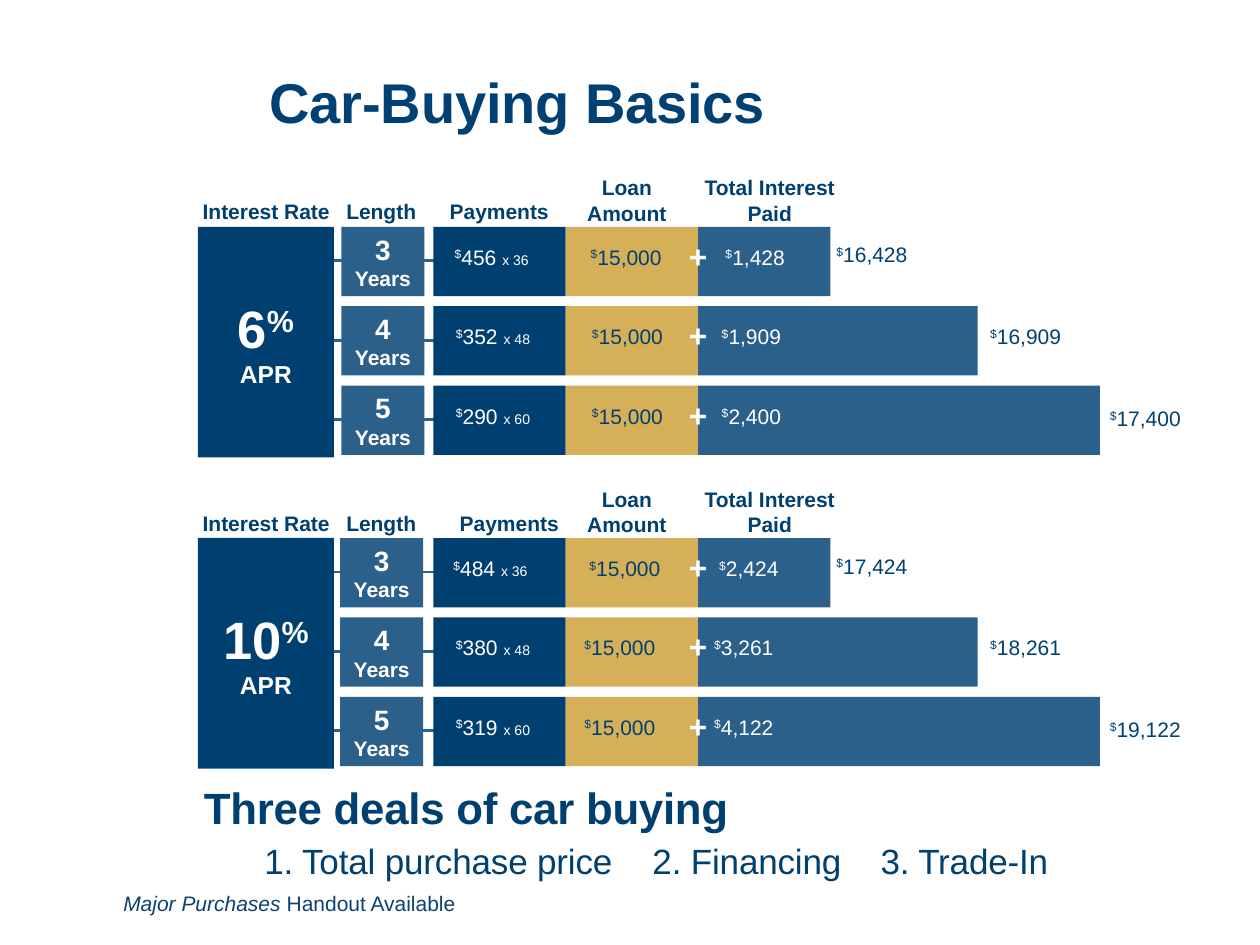
"""Build the car-buying slide comparing loan costs at two interest rates."""
from lxml.etree import SubElement
from pptx import Presentation
from pptx.dml.color import RGBColor
from pptx.enum.shapes import MSO_CONNECTOR, MSO_SHAPE
from pptx.enum.text import MSO_ANCHOR, PP_ALIGN
from pptx.oxml.ns import qn
from pptx.util import Inches, Pt

NAVY, BLUE, GOLD, WHITE = "004071", "2B608B", "D6B059", "FFFFFF"
RAISED = {"baseline": "30000"}
TIGHT = {"spc": "-10"}

presentation = Presentation()
presentation.slide_width, presentation.slide_height = Inches(10), Inches(7.5)
slide = presentation.slides.add_slide(presentation.slide_layouts[6])


def box(left, top, width, height, fill=None):
    area = [Inches(value) for value in (left, top, width, height)]
    if fill:
        shape = slide.shapes.add_shape(MSO_SHAPE.RECTANGLE, *area)
        shape.shadow.inherit = False
        shape.fill.solid()
        shape.fill.fore_color.rgb = RGBColor.from_string(fill)
        shape.line.fill.background()
    else:
        shape = slide.shapes.add_textbox(*area)
    shape.text_frame.word_wrap = True
    return shape.text_frame


def write(paragraph, parts, size, color, bold=False, align=PP_ALIGN.LEFT, tabs=()):
    paragraph.alignment = align
    if tabs:
        stops = SubElement(paragraph._p.get_or_add_pPr(), qn("a:tabLst"))
        for stop in tabs:
            SubElement(stops, qn("a:tab"), pos=str(Inches(stop)), algn="l")
    font = paragraph.font
    font.name, font.size, font.bold = "Arial", Pt(size), bold
    if color:
        font.color.rgb = RGBColor.from_string(color)
    for text, style in parts:
        run = paragraph.add_run()
        run.text = text
        for key, value in style.items():
            if key == "color":
                run.font.color.rgb = RGBColor.from_string(value)
            else:
                run._r.get_or_add_rPr().set(key, value)


title = box(2.04, 0.11, 7.26, 1.45)
title.vertical_anchor = MSO_ANCHOR.MIDDLE
title.paragraphs[0].line_spacing = 0.9
write(title.paragraphs[0], [("Car-Buying Basics", TIGHT)], 32, "004072", True)

loans = [
    {"rate": "6", "top": 1.8, "length_left": 2.71, "payments_left": 3.47, "rows": [
        ("456", "1,428", "16,428", 3.51, (1.08, 2.15)),
        ("352", "1,909", "16,909", 3.52, (1.08, 2.11)),
        ("290", "2,400", "17,400", 3.52, (1.08, 2.11))]},
    {"rate": "10", "top": 4.27, "length_left": 2.7, "payments_left": 3.55, "rows": [
        ("484", "2,424", "17,424", 3.5, (1.08, 2.11)),
        ("380", "3,261", "18,261", 3.52, (1.02, 2.05)),
        ("319", "4,122", "19,122", 3.52, (1.02, 2.05))]},
]
terms = [(3, 1.05, 6.54), (4, 2.22, 7.76), (5, 3.19, 8.71)]
row_pitch = 0.63

for loan in loans:
    top = loan["top"]
    for index in range(len(terms)):
        y = Inches(top + 0.27 + index * row_pitch)
        link = slide.shapes.add_connector(
            MSO_CONNECTOR.STRAIGHT, Inches(2.52), y, Inches(3.68), y)
        link.line.color.rgb = RGBColor.from_string(BLUE)
        link.line.width = Pt(1.5)
        SubElement(link._element.spPr, qn("a:effectLst"))

    rate = box(1.57, top, 1.08, 1.83, NAVY)
    write(rate.paragraphs[0], [(loan["rate"], {}), ("%", RAISED)], 30, WHITE, True,
          PP_ALIGN.CENTER)
    write(rate.add_paragraph(), [("APR", {})], 14, WHITE, True, PP_ALIGN.CENTER)

    for index, (term, row) in enumerate(zip(terms, loan["rows"])):
        years, interest_width, total_left = term
        payment, interest, total, values_left, tabs = row
        row_top = top + index * row_pitch

        length = box(loan["length_left"], row_top, 0.66, 0.55, BLUE)
        write(length.paragraphs[0], [(str(years), {})], 16, WHITE, True, PP_ALIGN.CENTER)
        write(length.add_paragraph(), [("Years", {})], 12, WHITE, True, PP_ALIGN.CENTER)

        for left, width, fill in ((3.44, 1.05, NAVY), (4.49, 1.05, GOLD),
                                  (5.54, interest_width, BLUE)):
            box(left, row_top, width, 0.55, fill)

        white, navy = {"color": WHITE}, {"color": NAVY}
        values = box(values_left, row_top + 0.09, 3, 0.3)
        write(values.paragraphs[0], [
            ("$", white | RAISED), (f"{payment} ", white),
            (f"x {years * 12}\t", white | {"sz": "800"}),
            ("$", navy | RAISED), ("15,000\t", navy),
            ("$", white | RAISED), (interest, white)], 12, None, tabs=tabs)

        plus = box(5.37, row_top + 0.03, 0.43, 0.47)
        write(plus.paragraphs[0], [("+", {})], 18, WHITE, True)
        total_label = box(total_left, top + 0.07 + index * 0.65, 0.94, 0.35)
        write(total_label.paragraphs[0], [("$", RAISED), (total, {})], 12, NAVY)

    for heading, left, rise, width, align in (
            ("Interest Rate", 1.51, 0.27, 1.41, PP_ALIGN.LEFT),
            ("Length", 2.65, 0.27, 0.96, PP_ALIGN.LEFT),
            ("Payments", loan["payments_left"], 0.27, 1.18, PP_ALIGN.LEFT),
            ("Loan Amount", 4.44, 0.46, 1.07, PP_ALIGN.CENTER),
            ("Total Interest Paid", 5.41, 0.46, 1.4, PP_ALIGN.CENTER)):
        header = box(left, top - rise, width, 0.3)
        write(header.paragraphs[0], [(heading, {})], 12, NAVY, True, align)

deals_heading = box(1.52, 6.15, 6.92, 0.53)
write(deals_heading.paragraphs[0], [("Three deals of car buying", TIGHT)], 25, NAVY, True)

deals = box(2, 6.45, 6.78, 0.54)
deals.paragraphs[0].line_spacing = 1.5
write(deals.paragraphs[0],
      [("1. Total purchase price\t2. Financing\t3. Trade-In", TIGHT)],
      20, NAVY, tabs=(3.08, 4.89))

handout = box(0.88, 7.02, 5.28, 0.3)
write(handout.paragraphs[0],
      [("Major Purchases ", {"i": "1"}), ("Handout Available", {})], 12, "0E4071")

presentation.save("out.pptx")
